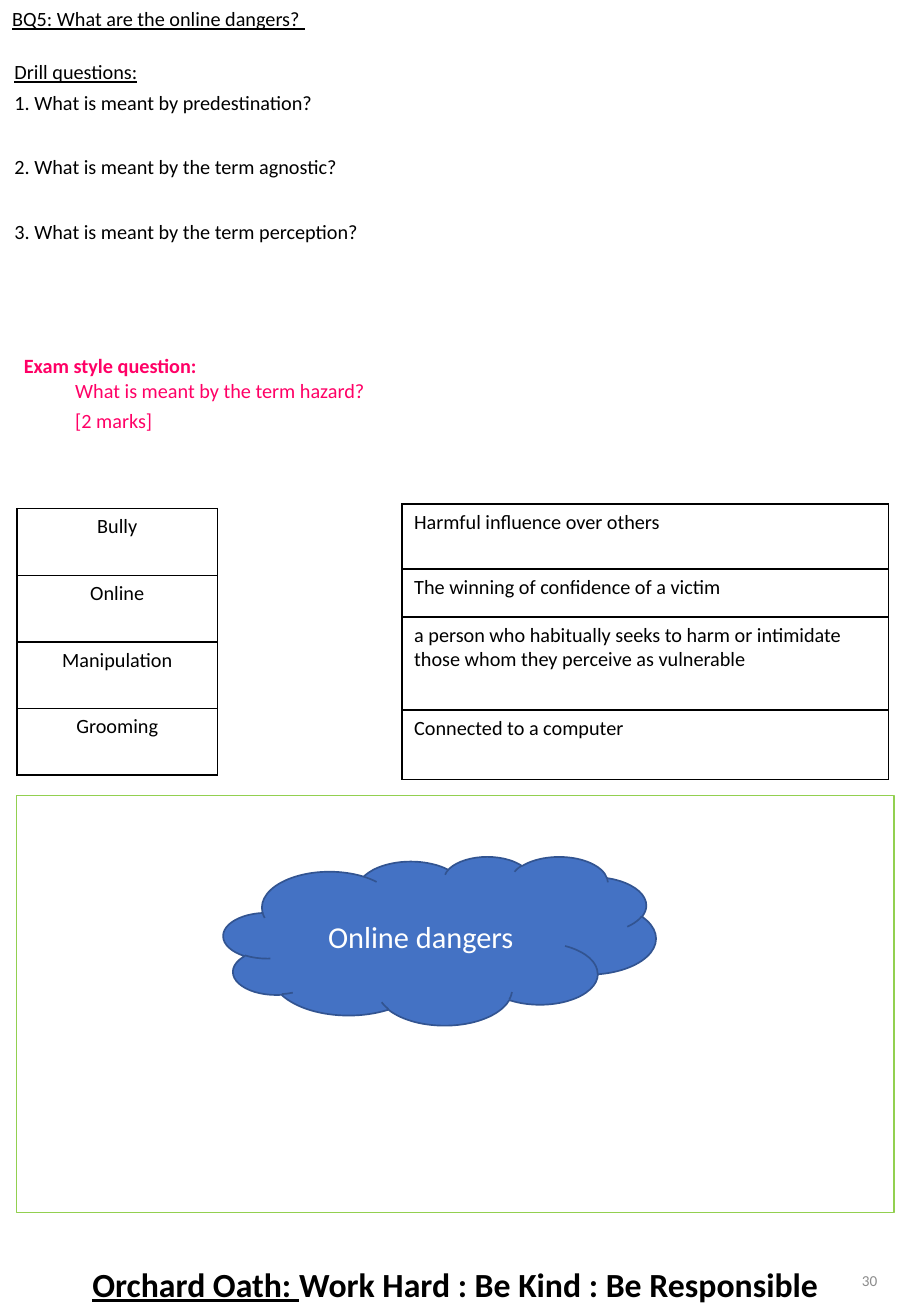
from lxml import etree
from pptx import Presentation
from pptx.dml.color import RGBColor
from pptx.enum.shapes import MSO_SHAPE
from pptx.enum.text import MSO_ANCHOR, MSO_AUTO_SIZE, PP_ALIGN
from pptx.oxml.ns import qn
from pptx.util import Pt

LEFT, CENTER, RIGHT = PP_ALIGN.LEFT, PP_ALIGN.CENTER, PP_ALIGN.RIGHT
TOP, MIDDLE = MSO_ANCHOR.TOP, MSO_ANCHOR.MIDDLE
TITLE_ONLY = 5

# Content
FONT = "Calibri"
COLORS = {"text": "000000", "exam": "FF0066", "number": "8C8C8C", "frame": "92D050",
          "cloud": "4472C4", "cloud_line": "325491", "white": "FFFFFF"}
WIDTH, HEIGHT = 540, 780

TITLE = "BQ5: What are the online dangers? "
# Paragraphs: text, space before, left indent
DRILL = [
    ("Drill questions:", 0, 0),
    ("1. What is meant by predestination?", 3.8, 0),
    ("2. What is meant by the term agnostic?", 23.9, 0),
    ("3. What is meant by the term perception?", 23.9, 0),
]
EXAM = [
    ("Exam style question:", 0, 5.5),
    ("What is meant by the term hazard?", 0, 36),
    ("[2 marks]", 3.8, 36),
]
# Tables: left, top, width, alignment, rows of (text, height)
TABLES = [
    (10, 301.5, 119, CENTER, [
        ("Bully", 39.5), ("Online", 39.5), ("Manipulation", 39.5), ("Grooming", 39.5)]),
    (238.3, 298.7, 288.3, LEFT, [
        ("Harmful influence over others", 38.7),
        ("The winning of confidence of a victim", 28.3),
        ("a person who habitually seeks to harm or intimidate those whom they perceive as vulnerable", 55.2),
        ("Connected to a computer", 41.2)]),
]
CLOUD = "Online dangers "
OATH = [("Orchard Oath: ", True), ("Work Hard : Be Kind : Be Responsible", False)]
PAGE = "30"


def rgb(name):
    return RGBColor.from_string(COLORS[name])


def style(p, size=12, color="text", align=LEFT, bold=False, underline=False):
    p.alignment = align
    f = p.font
    f.name, f.size, f.bold, f.underline = FONT, Pt(size), bold, underline
    f.color.rgb = rgb(color)


def add_text_box(s, left, top, width, height, anchor=TOP):
    tf = s.shapes.add_textbox(Pt(left), Pt(top), Pt(width), Pt(height)).text_frame
    tf.word_wrap = True
    tf.vertical_anchor = anchor
    return tf


def add_questions(s, left, top, width, height, lines, color):
    tf = add_text_box(s, left, top, width, height)
    for i, (text, before, indent) in enumerate(lines):
        p = tf.add_paragraph() if i else tf.paragraphs[0]
        p.text = text
        if before:
            p.space_before = Pt(before)
        if indent:
            p._p.get_or_add_pPr().set("marL", str(Pt(indent)))
        style(p, color=color)
    return tf


def add_panel(s, preset, left, top, width, height, fill, line, weight):
    sp = s.shapes.add_shape(preset, Pt(left), Pt(top), Pt(width), Pt(height))
    sp.shadow.inherit = False
    if fill:
        sp.fill.solid()
        sp.fill.fore_color.rgb = rgb(fill)
    else:
        sp.fill.background()
    sp.line.color.rgb = rgb(line)
    sp.line.width = Pt(weight)
    return sp


def add_borders(cell):
    tc_pr = cell._tc.get_or_add_tcPr()
    for i, side in enumerate(("lnL", "lnR", "lnT", "lnB")):
        ln = etree.Element(qn("a:" + side), w=str(Pt(1)))
        fill = etree.SubElement(ln, qn("a:solidFill"))
        etree.SubElement(fill, qn("a:srgbClr"), val=COLORS["text"])
        tc_pr.insert(i, ln)


def add_word_table(s, left, top, width, align, rows):
    height = sum(h for _, h in rows)
    table = s.shapes.add_table(len(rows), 1, Pt(left), Pt(top), Pt(width), Pt(height)).table
    table.first_row = table.horz_banding = False
    for i, (text, row_height) in enumerate(rows):
        table.rows[i].height = Pt(row_height)
        cell = table.cell(i, 0)
        cell.text = text
        cell.fill.background()
        add_borders(cell)
        style(cell.text_frame.paragraphs[0], align=align)


def main():
    prs = Presentation()
    prs.slide_width, prs.slide_height = Pt(WIDTH), Pt(HEIGHT)
    s = prs.slides.add_slide(prs.slide_layouts[TITLE_ONLY])

    # Title
    title = s.shapes.title
    title.left, title.top, title.width, title.height = Pt(0), Pt(0), Pt(WIDTH), Pt(21.8)
    tf = title.text_frame
    tf.text = TITLE
    tf.auto_size = MSO_AUTO_SIZE.NONE
    tf.vertical_anchor = TOP
    style(tf.paragraphs[0], underline=True)

    # Questions
    drill = add_questions(s, 1.5, 31.7, 538.5, 170, DRILL, "text")
    drill.paragraphs[0].font.underline = True
    exam = add_questions(s, 1.5, 206, 538.5, 85, EXAM, "exam")
    exam.paragraphs[0].font.bold = True

    # Matching words and meanings
    for table in TABLES:
        add_word_table(s, *table)

    # Mind map
    add_panel(s, MSO_SHAPE.RECTANGLE, 10, 471.6, 520, 247, None, "frame", 0.75)
    cloud = add_panel(s, MSO_SHAPE.CLOUD, 132.5, 507.6, 256.3, 100, "cloud", "cloud_line", 1)
    tf = cloud.text_frame
    tf.text = CLOUD
    tf.vertical_anchor = MIDDLE
    style(tf.paragraphs[0], size=18, color="white", align=CENTER)

    # Footer
    p = add_text_box(s, 0, 748.1, WIDTH, 31.7).paragraphs[0]
    p.line_spacing = 0.9
    style(p, size=20, align=CENTER, bold=True)
    for text, underline in OATH:
        r = p.add_run()
        r.text = text
        r.font.underline = underline
    p = add_text_box(s, 405.4, 738, 121.7, 41.8, MIDDLE).paragraphs[0]
    p.text = PAGE
    style(p, size=9, color="number", align=RIGHT)

    prs.save("out.pptx")


if __name__ == "__main__":
    main()
